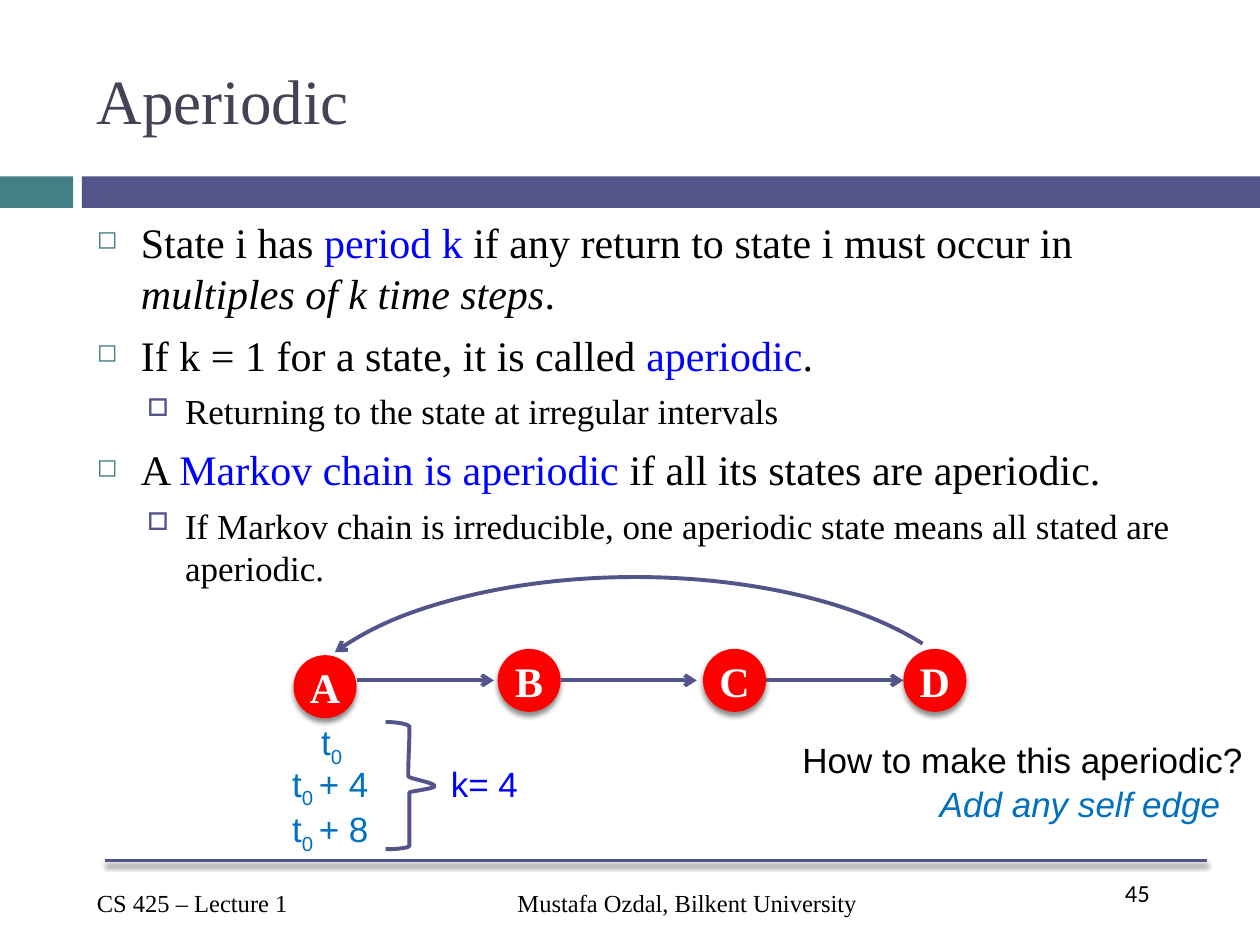
from dataclasses import dataclass

from lxml import etree
from pptx import Presentation
from pptx.dml.color import RGBColor
from pptx.enum.shapes import MSO_CONNECTOR, MSO_SHAPE
from pptx.enum.text import MSO_ANCHOR, MSO_AUTO_SIZE, PP_ALIGN
from pptx.oxml.ns import qn
from pptx.util import Inches, Pt

RECTANGLE, OVAL, ARC = MSO_SHAPE.RECTANGLE, MSO_SHAPE.OVAL, MSO_SHAPE.ARC
STRAIGHT = MSO_CONNECTOR.STRAIGHT
MIDDLE, TOP = MSO_ANCHOR.MIDDLE, MSO_ANCHOR.TOP
LEFT, CENTER = PP_ALIGN.LEFT, PP_ALIGN.CENTER
FIT_SHAPE, NO_FIT = MSO_AUTO_SIZE.SHAPE_TO_FIT_TEXT, MSO_AUTO_SIZE.NONE
SERIF, SANS, NUMBER_FONT = "Times New Roman", "Arial", "Calibri"
PURPLE, TEAL, BLACK, WHITE = "53548A", "438086", "000000", "FFFFFF"
RED, BLUE, SKY, SLATE = "FF0000", "0000FF", "0070C0", "424456"


@dataclass
class Run:
    text: str
    color: str = BLACK
    italic: bool = False
    bold: bool = False
    baseline: int = 0


@dataclass
class Level:
    size: int
    margin: float
    hanging: float
    space_before: float
    bullet: str
    bullet_color: str
    bullet_percent: int


@dataclass
class Node:
    label: str
    left: float
    top: float


@dataclass
class Label:
    left: float
    top: float
    width: float
    runs: list[Run]


OUTER = Level(24, 0.35, 0.35, 7, "◻", TEAL, 60)
INNER = Level(20, 0.7, 0.3, 5.5, "□", PURPLE, 70)

BODY = [
    (OUTER, [Run("State i has "), Run("period k", BLUE),
             Run(" if any return to state i must occur in "),
             Run("multiples of k time steps", italic=True), Run(".")]),
    (OUTER, [Run("If k = 1 for a state, it is called "), Run("aperiodic", BLUE), Run(".")]),
    (INNER, [Run("Returning to the state at irregular intervals")]),
    (OUTER, [Run("A "), Run("Markov chain is aperiodic ", BLUE),
             Run("if all its states are aperiodic.")]),
    (INNER, [Run("If Markov chain is irreducible, one aperiodic state means "
                 "all stated are aperiodic.")]),
]
NODE_SIZE = 0.5
NODES = [Node("A", 2.33, 5.2), Node("B", 3.95, 5.15), Node("C", 5.58, 5.15), Node("D", 7.17, 5.15)]
EDGE_Y = 5.4
EDGE_ENDS = [3.92, 5.53, 7.17]


def time_runs(subscript: str, rest: str) -> list[Run]:
    return [Run("t", SKY), Run(subscript, SKY, baseline=-25000), Run(rest, SKY)]


LABELS = [
    Label(2.45, 5.67, 0.38, time_runs("0", "")),
    Label(2.22, 6, 0.83, time_runs("0 ", "+ 4")),
    Label(2.22, 6.36, 0.83, time_runs("0 ", "+ 8")),
    Label(3.48, 6, 0.74, [Run("k= 4", BLUE)]),
    Label(6.27, 5.81, 3.72, [Run("How to make this aperiodic?")]),
    Label(7.36, 6.16, 2.45, [Run("Add any self edge", SKY, italic=True)]),
]
BRACE_START = (3.06, 5.73)
BRACE_CURVES = [
    ((3.16, 5.73), (3.25, 5.75), (3.25, 5.77)),
    ((3.25, 5.91), (3.24, 6.02), (3.24, 6.16)),
    ((3.24, 6.18), (3.45, 6.21), (3.45, 6.24)),
    ((3.45, 6.26), (3.25, 6.28), (3.25, 6.29)),
    ((3.25, 6.43), (3.25, 6.57), (3.25, 6.71)),
    ((3.25, 6.73), (3.16, 6.74), (3.06, 6.74)),
]


def rgb(color: str) -> RGBColor:
    return RGBColor.from_string(color)


def add_runs(paragraph, runs: list[Run], size: float, font: str) -> None:
    for item in runs:
        if not item.text:
            continue
        run = paragraph.add_run()
        run.text = item.text
        run.font.size, run.font.name = Pt(size), font
        run.font.bold, run.font.italic = item.bold, item.italic
        run.font.color.rgb = rgb(item.color)
        if item.baseline:
            run.font._element.set("baseline", str(item.baseline))


def add_text(slide, left: float, top: float, width: float, height: float, runs: list[Run],
             size: float, font: str = SERIF, align=LEFT, anchor=TOP, wrap: bool = True):
    frame = slide.shapes.add_textbox(Inches(left), Inches(top), Inches(width), Inches(height)).text_frame
    frame.word_wrap = wrap
    frame.auto_size = NO_FIT if wrap else FIT_SHAPE
    frame.vertical_anchor = anchor
    frame.paragraphs[0].alignment = align
    add_runs(frame.paragraphs[0], runs, size, font)
    return frame


def add_body(slide) -> None:
    frame = add_text(slide, 0.67, 1.67, 8.92, 3.25, [], 24)
    for index, (level, runs) in enumerate(BODY):
        paragraph = frame.add_paragraph() if index else frame.paragraphs[0]
        paragraph.level = int(level is INNER)
        paragraph.space_before = Pt(level.space_before)
        properties = paragraph._p.get_or_add_pPr()
        properties.set("marL", str(Inches(level.margin)))
        properties.set("indent", str(-Inches(level.hanging)))
        color = etree.SubElement(properties, qn("a:buClr"))
        etree.SubElement(color, qn("a:srgbClr"), val=level.bullet_color)
        etree.SubElement(properties, qn("a:buSzPct"), val=str(level.bullet_percent * 1000))
        etree.SubElement(properties, qn("a:buChar"), char=level.bullet)
        add_runs(paragraph, runs, level.size, SERIF)


def set_shadow(shape, visible: bool) -> None:
    effects = etree.SubElement(shape._element.spPr, qn("a:effectLst"))
    if visible:
        shadow = etree.SubElement(effects, qn("a:outerShdw"), blurRad=str(Pt(3)),
                                  dist=str(Pt(2.4)), dir="5400000", rotWithShape="0")
        color = etree.SubElement(shadow, qn("a:srgbClr"), val=BLACK)
        etree.SubElement(color, qn("a:alpha"), val="45000")


def style_outline(shape, width: float = 2.25, arrow: str = "", shadow: bool = False) -> None:
    shape.line.color.rgb, shape.line.width = rgb(PURPLE), Pt(width)
    if arrow:
        etree.SubElement(shape.line._get_or_add_ln(), qn(f"a:{arrow}"), type="arrow")
    set_shadow(shape, shadow)


def add_filled(slide, kind, left: float, top: float, width: float, height: float,
               color: str, shadow: bool = False):
    shape = slide.shapes.add_shape(kind, Inches(left), Inches(top), Inches(width), Inches(height))
    shape.fill.solid()
    shape.fill.fore_color.rgb = rgb(color)
    shape.line.fill.background()
    set_shadow(shape, shadow)
    return shape


def add_line(slide, start: float, end: float, y: float, width: float = 2.25,
             arrow: str = "", shadow: bool = False) -> None:
    line = slide.shapes.add_connector(STRAIGHT, Inches(start), Inches(y), Inches(end), Inches(y))
    style_outline(line, width, arrow, shadow)


def add_node(slide, node: Node) -> None:
    shape = add_filled(slide, OVAL, node.left, node.top, NODE_SIZE, NODE_SIZE, RED, True)
    frame = shape.text_frame
    frame.word_wrap, frame.vertical_anchor = False, MIDDLE
    frame.paragraphs[0].alignment = CENTER
    add_runs(frame.paragraphs[0], [Run(node.label, WHITE, bold=True)], 24, SERIF)


def add_return_arc(slide) -> None:
    arc = slide.shapes.add_shape(ARC, Inches(2.25), Inches(4.58), Inches(5.58), Inches(2.49))
    arc.adjustments[0], arc.adjustments[1] = 117.13, 205.54
    arc.fill.background()
    style_outline(arc, arrow="headEnd")


def add_brace(slide, steps: int = 8) -> None:
    points, start = [], BRACE_START
    for first, second, end in BRACE_CURVES:
        for step in range(1, steps + 1):
            t = step / steps
            weights = ((1 - t) ** 3, 3 * t * (1 - t) ** 2, 3 * t * t * (1 - t), t ** 3)
            corners = (start, first, second, end)
            points.append(tuple(Inches(sum(w * c[axis] for w, c in zip(weights, corners)))
                                for axis in (0, 1)))
        start = end
    builder = slide.shapes.build_freeform(Inches(BRACE_START[0]), Inches(BRACE_START[1]))
    builder.add_line_segments(points, close=False)
    brace = builder.convert_to_shape()
    brace.fill.background()
    style_outline(brace)


def main() -> None:
    presentation = Presentation()
    presentation.slide_width, presentation.slide_height = Inches(10), Inches(7.5)
    slide = presentation.slides.add_slide(presentation.slide_layouts[6])
    add_filled(slide, RECTANGLE, 0, 1.4, 0.58, 0.25, TEAL)
    add_filled(slide, RECTANGLE, 0.65, 1.4, 9.35, 0.25, PURPLE)
    add_text(slide, 8.83, 6.92, 0.75, 0.5, [Run("45")], 14, NUMBER_FONT)
    add_line(slide, 0.83, 9.58, 6.83, 1.5, shadow=True)
    add_text(slide, 0.67, 7, 1.83, 0.34, [Run("CS 425 – Lecture 1")], 14)
    add_text(slide, 2.58, 7, 5.75, 0.34, [Run("Mustafa Ozdal, Bilkent University")], 14, align=CENTER)
    add_text(slide, 0.67, 0.25, 8.92, 1.08, [Run("Aperiodic", SLATE)], 36, anchor=MIDDLE)
    add_body(slide)
    for node in NODES:
        add_node(slide, node)
    for node, end in zip(NODES, EDGE_ENDS):
        add_line(slide, node.left + NODE_SIZE, end, EDGE_Y, arrow="tailEnd")
    add_return_arc(slide)
    for label in LABELS:
        add_text(slide, label.left, label.top, label.width, 0.44, label.runs, 20, SANS, wrap=False)
    add_brace(slide)
    presentation.save("out.pptx")


if __name__ == "__main__":
    main()
